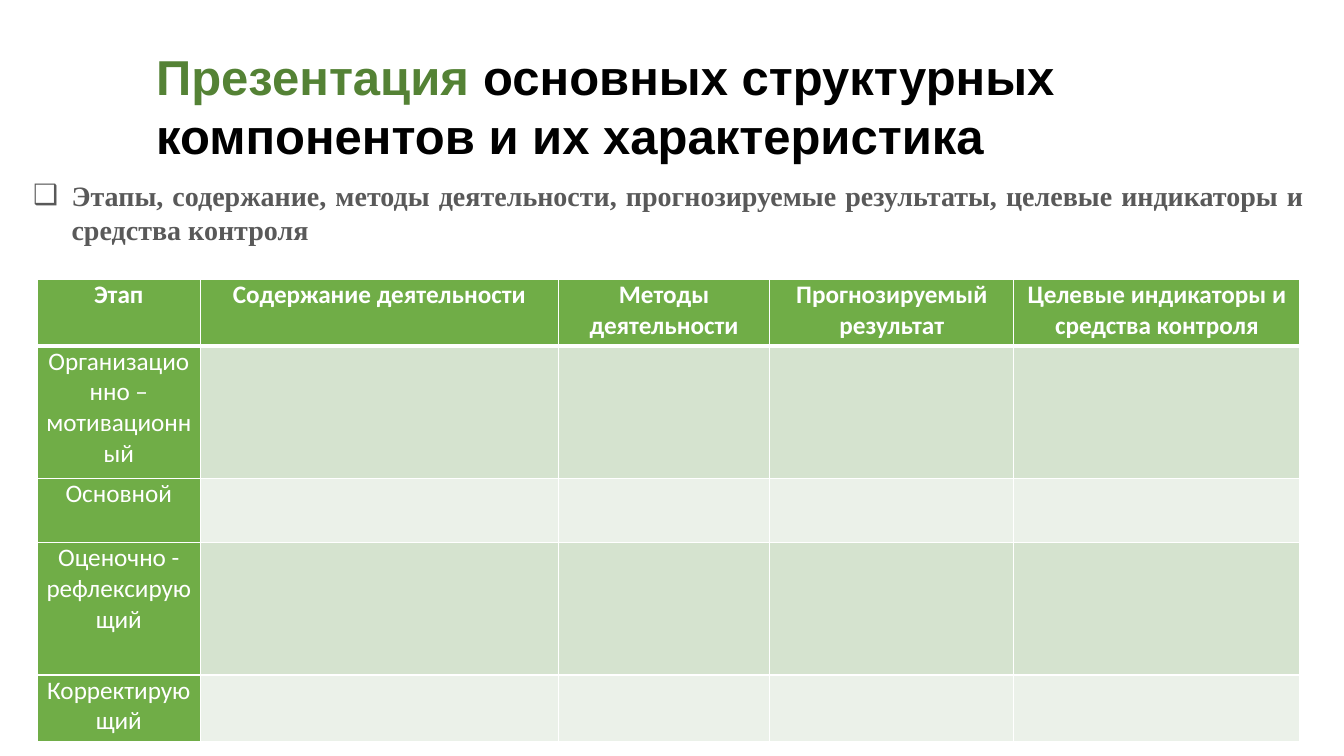
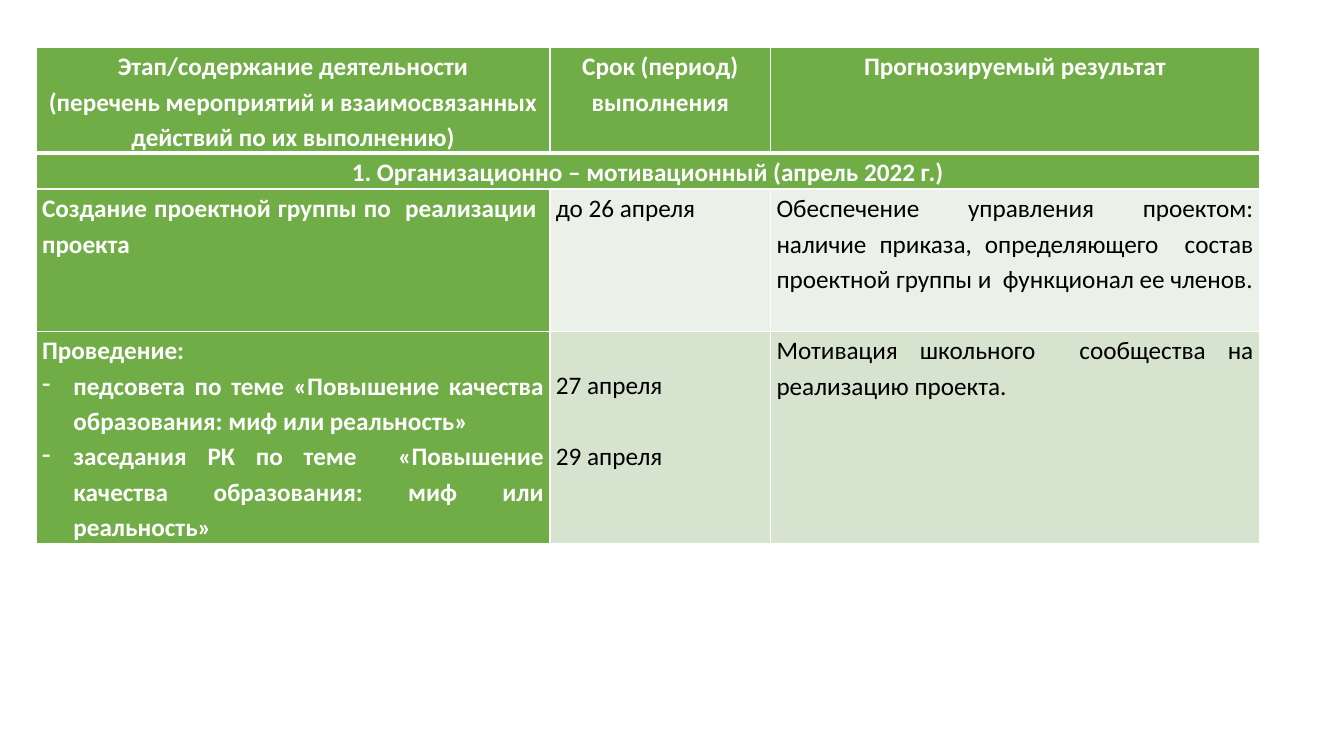
"""Builds two slides with tables of project stages."""
from lxml.etree import SubElement as Sub
from pptx import Presentation
from pptx.dml.color import RGBColor
from pptx.enum.text import MSO_ANCHOR as Anchor, MSO_AUTO_SIZE as Auto, PP_ALIGN as Align
from pptx.oxml.ns import qn
from pptx.util import Cm, Pt

GREEN, DARK, GREY = "70AD47", "548235", "595959"
WHITE, BLACK = "FFFFFF", "000000"
BANDS = ("EBF1E9", "D5E3CF")

TITLE = [("Презентация ", DARK), ("основных структурных компонентов и их характеристика", BLACK)]
LEAD = "Этапы, содержание, методы деятельности, прогнозируемые результаты, целевые индикаторы и средства контроля"

STAGES = {
    "at": (0.94, 7.04),
    "cols": (4.11, 9.02, 5.33, 6.15, 7.21),
    "heights": (1.68, 3.33, 1.63, 3.33, 1.68),
    "inset": 0.18, "line": 1, "bold": False, "align": Align.CENTER,
    "rows": [
        ["Этап", "Содержание деятельности", "Методы деятельности",
         "Прогнозируемый результат", "Целевые индикаторы и средства контроля"],
        ["Организационно – мотивационный", "", "", "", ""],
        ["Основной", "", "", "", ""],
        ["Оценочно - рефлексирующий", "", "", "", ""],
        ["Корректирующий", "", "", "", ""],
    ],
}
PLAN = {
    "at": (0.91, 1.19),
    "cols": (12.95, 5.56, 12.32),
    "heights": (2.66, 0.9, 3.58, 5.35),
    "inset": 0.15, "line": 1.15, "bold": True, "align": Align.JUSTIFY,
    "rows": [
        [["Этап/содержание деятельности",
          "(перечень мероприятий и взаимосвязанных действий по их выполнению)"],
         "Срок (период) выполнения", "Прогнозируемый результат"],
        ["1. Организационно – мотивационный (апрель 2022 г.)"],
        ["Создание проектной группы по  реализации  проекта", "до 26 апреля",
         "Обеспечение управления проектом: наличие приказа, определяющего  состав "
         "проектной группы и  функционал ее членов."],
        [["Проведение:",
          "- педсовета по теме «Повышение качества образования: миф или реальность»",
          "- заседания РК по теме  «Повышение качества образования: миф или реальность»"],
         (["27 апреля", "29 апреля"], 25),
         "Мотивация школьного  сообщества на реализацию проекта."],
    ],
}


def rgb(code):
    return RGBColor.from_string(code)


def write(para, text, size, color, bold=True, face="Calibri"):
    run = para.add_run()
    run.text = text
    font = run.font
    font.size, font.bold, font.name = Pt(size), bold, face
    font.color.rgb = rgb(color)


def bullet(para, mark, dent):
    props = para._p.get_or_add_pPr()
    props.set("marL", str(Cm(dent)))
    props.set("indent", str(-Cm(dent)))
    Sub(props, qn("a:buChar")).set("char", mark)


def border(cell, top, bottom):
    props = cell._tc.get_or_add_tcPr()
    for side, width in zip("LRTB", (1, 1, top, bottom)):
        line = Sub(props, qn("a:ln" + side), w=str(Pt(width)))
        fill = Sub(line, qn("a:solidFill"))
        Sub(fill, qn("a:srgbClr"), val=WHITE)


def fill_cell(cell, item, spec, head, green):
    lines, gap = item if isinstance(item, tuple) else (item, 0)
    lines = [lines] if isinstance(lines, str) else lines
    cell.margin_left = cell.margin_right = Cm(spec["inset"])
    cell.margin_top, cell.margin_bottom = Pt(gap), 0
    frame = cell.text_frame
    for num, text in enumerate(lines):
        para = frame.add_paragraph() if num else frame.paragraphs[0]
        para.alignment = Align.CENTER if head else spec["align"]
        para.line_spacing = spec["line"]
        if num and gap:
            para.space_before = Pt(gap)
        if text.startswith("- "):
            bullet(para, "-", 0.79)
            text = text[2:]
        if text:
            write(para, text, 18, WHITE if green else BLACK, head or (green and spec["bold"]))


def add_grid(slide, spec):
    rows, cols, tall = spec["rows"], spec["cols"], spec["heights"]
    left, top = spec["at"]
    grid = slide.shapes.add_table(len(rows), len(cols), Cm(left), Cm(top),
                                  Cm(sum(cols)), Cm(sum(tall))).table
    for col, width in zip(grid.columns, cols):
        col.width = Cm(width)
    for r, row in enumerate(rows):
        grid.rows[r].height = Cm(tall[r])
        whole = len(row) == 1
        for c in range(len(cols)):
            cell = grid.cell(r, c)
            green = r == 0 or c == 0 or whole
            border(cell, 3 if r == 1 else 1, 3 if r == 0 else 1)
            cell.fill.solid()
            cell.fill.fore_color.rgb = rgb(GREEN if green else BANDS[r % 2])
            if c < len(row):
                fill_cell(cell, row[c], spec, r == 0 or whole, green)
        if whole:
            grid.cell(r, 0).merge(grid.cell(r, len(cols) - 1))


def place(shape, left, top, width, height, anchor, align):
    shape.left, shape.top, shape.width, shape.height = map(Cm, (left, top, width, height))
    frame = shape.text_frame
    frame.word_wrap, frame.auto_size, frame.vertical_anchor = True, Auto.NONE, anchor
    para = frame.paragraphs[0]
    para.alignment, para.space_before = align, Pt(0)
    return para


def main():
    deck = Presentation()
    deck.slide_width, deck.slide_height = Cm(33.87), Cm(19.05)

    slide = deck.slides.add_slide(deck.slide_layouts[1])
    para = place(slide.shapes.title, 3.68, 1.37, 29.72, 2.59, Anchor.MIDDLE, Align.LEFT)
    for text, color in TITLE:
        write(para, text, 35, color, face="Arial")
    para = place(slide.placeholders[1], 0.58, 4.37, 32.54, 2.5, Anchor.TOP, Align.JUSTIFY)
    bullet(para, "❑", 0.97)
    write(para, LEAD, 20, GREY, face="Times New Roman")
    add_grid(slide, STAGES)

    add_grid(deck.slides.add_slide(deck.slide_layouts[6]), PLAN)
    deck.save("out.pptx")


if __name__ == "__main__":
    main()
